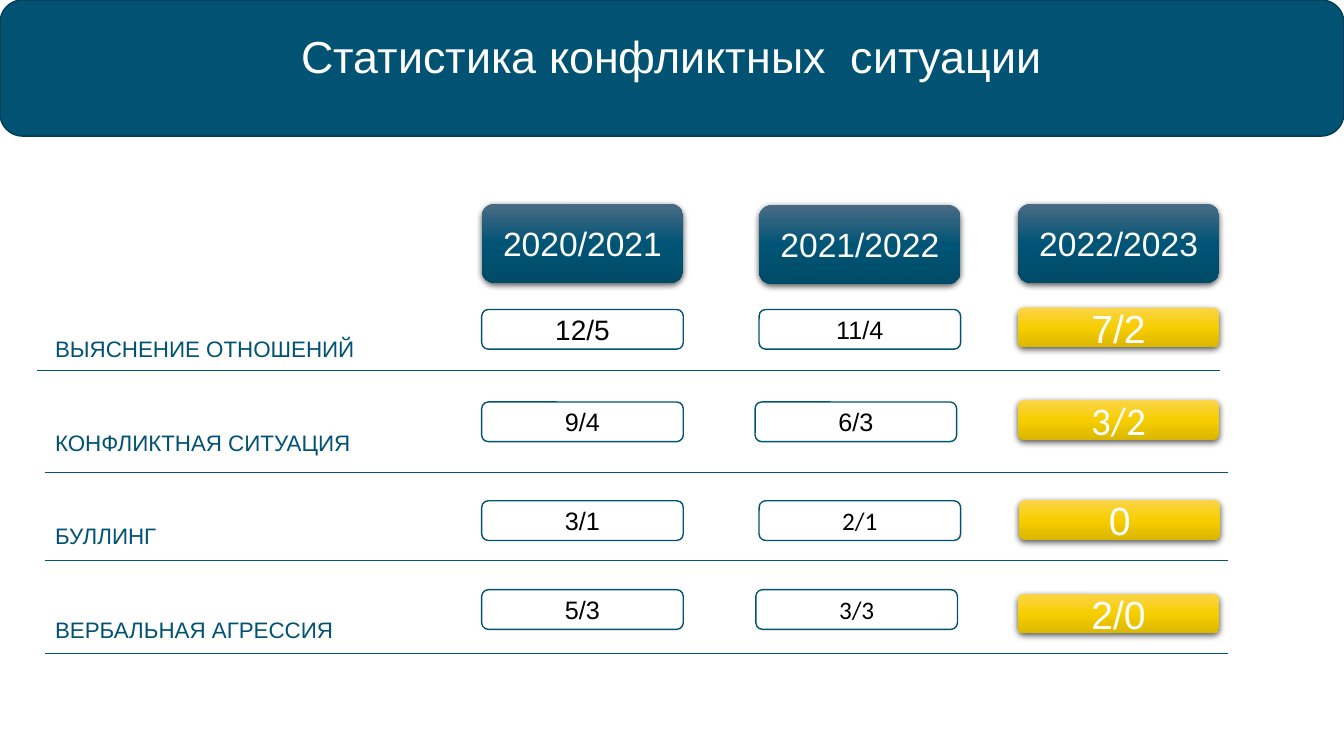
import pptx
import pptx.util
import pptx.dml.color
import pptx.enum.shapes
import pptx.enum.text
import pptx.oxml
import pptx.oxml.ns

Cm, Pt = pptx.util.Cm, pptx.util.Pt
Kind = pptx.enum.shapes.MSO_SHAPE
Align, Anchor = pptx.enum.text.PP_ALIGN, pptx.enum.text.MSO_ANCHOR
NS = pptx.oxml.ns.nsdecls("a")

# Content
TITLE = "Статистика конфликтных  ситуации"
LABELS = ["ВЫЯСНЕНИЕ ОТНОШЕНИЙ", "КОНФЛИКТНАЯ СИТУАЦИЯ", "БУЛЛИНГ", "ВЕРБАЛЬНАЯ АГРЕССИЯ"]
YEARS = [("2020/2021", 5.13), ("2021/2022", 5.16), ("2022/2023", 5.13)]  # text, top
# Each cell: text, size, font, shift from its column's left
COUNTS = [
    [("12/5", 20, "Arial", 0), ("9/4", 18, "Arial", 0),
     ("3/1", 18, "Arial", 0), ("5/3", 18, "Arial", 0)],
    [("11/4", 18, "Arial", 0), ("6/3", 18, "Arial", -0.1),
     ("2/1", 18, "Calibri", 0), ("3/3", 18, "Calibri", -0.08)],
    [("7/2", 28, "Arial", 0), ("3/2", 28, "Calibri", 0),
     ("0", 28, "Arial", 0.03), ("2/0", 28, "Arial", 0)],
]

# Layout in centimetres
WIDE, HIGH = 33.87, 19.05
COLS = [12.14, 19.13, 25.65]
ROWS = [7.8, 10.13, 12.62, 14.86]
GOLD_ROWS = [7.75, 10.08, 12.6, 14.96]
RULES = [(0.94, 9.32), (1.14, 11.91), (1.14, 14.12), (1.14, 16.46)]  # left, top
RULE_W, CELL_W, CELL_H, HEAD_H = 29.8, 5.08, 1, 2

# Colours
TEAL, EDGE, WHITE, BLACK = "025373", "013D55", "FFFFFF", "000000"
BLUES = ["4B6B85", "005475", "004B68"]
GOLDS = ["FBD54B", "F7CE00", "DBB700"]


def color(hex_):
    return pptx.dml.color.RGBColor.from_string(hex_)


def write(par, text, size, font, ink):
    run = par.add_run()
    run.text = text
    run.font.size, run.font.name = Pt(size), font
    run.font.color.rgb = color(ink)


def shade(box, tones):
    """Three-tone vertical gradient with a soft drop shadow."""
    stops = "".join(f'<a:gs pos="{i * 50000}"><a:srgbClr val="{tone}"/></a:gs>'
                    for i, tone in enumerate(tones))
    grad = pptx.oxml.parse_xml(f'<a:gradFill {NS} rotWithShape="1"><a:gsLst>{stops}</a:gsLst>'
                               '<a:lin ang="5400000" scaled="0"/></a:gradFill>')
    glow = pptx.oxml.parse_xml(
        f'<a:effectLst {NS}><a:outerShdw blurRad="{Pt(4.5)}" dist="{Pt(1.5)}" dir="5400000" '
        'rotWithShape="0"><a:srgbClr val="000000"><a:alpha val="63000"/></a:srgbClr>'
        '</a:outerShdw></a:effectLst>')
    box.line.fill.background()
    props = box._element.spPr
    props.find(pptx.oxml.ns.qn("a:prstGeom")).addnext(grad)
    props.find(pptx.oxml.ns.qn("a:ln")).addnext(glow)


def panel(left, top, width, height, fill, edge=None):
    box = slide.shapes.add_shape(Kind.ROUNDED_RECTANGLE, Cm(left), Cm(top), Cm(width), Cm(height))
    if isinstance(fill, list):
        shade(box, fill)
    else:
        box.shadow.inherit = False
        box.fill.solid()
        box.fill.fore_color.rgb = color(fill)
        box.line.color.rgb = color(edge)
        box.line.width = Pt(1)
    return box


def caption(box, text, size, font, ink):
    frame = box.text_frame
    frame.word_wrap = True
    frame.vertical_anchor = Anchor.MIDDLE
    par = frame.paragraphs[0]
    par.alignment = Align.CENTER
    write(par, text, size, font, ink)


deck = pptx.Presentation()
deck.slide_width, deck.slide_height = Cm(WIDE), Cm(HIGH)
slide = deck.slides.add_slide(deck.slide_layouts[5])

# Row labels, one line of fixed height per row
names = slide.shapes.add_textbox(Cm(1.14), Cm(6.63), Cm(9.8), Cm(9.83)).text_frame
names.word_wrap = True
for i, label in enumerate(LABELS):
    par = names.add_paragraph() if i else names.paragraphs[0]
    par.line_spacing = Pt(67)
    write(par, label, 16, "Arial", TEAL)

# Rules under the rows
for left, top in RULES:
    rule = slide.shapes.add_connector(pptx.enum.shapes.MSO_CONNECTOR.STRAIGHT,
                                      Cm(left), Cm(top), Cm(left + RULE_W), Cm(top))
    rule.line.color.rgb = color(TEAL)
    rule.line.width = Pt(0.5)
    rule._element.spPr.append(pptx.oxml.parse_xml(f"<a:effectLst {NS}/>"))

# Year headings
for left, (year, top) in zip(COLS, YEARS):
    caption(panel(left, top, CELL_W, HEAD_H, BLUES), year, 24, "Arial", WHITE)

# Counts, with the latest year in gold
for left, cells in zip(COLS, COUNTS):
    last = left == COLS[-1]
    for top, (text, size, font, shift) in zip(GOLD_ROWS if last else ROWS, cells):
        box = panel(left + shift, top, CELL_W, CELL_H, GOLDS if last else WHITE, TEAL)
        caption(box, text, size, font, WHITE if last else BLACK)

# Banner with the title on top
panel(0, 0, WIDE, 3.43, TEAL, EDGE)
title = slide.shapes.title
title.left, title.top, title.width, title.height = Cm(0), Cm(0.5), Cm(WIDE), Cm(1.8)
caption(title, TITLE, 32, "Arial", WHITE)
slide.shapes._spTree.append(title._element)

deck.save("out.pptx")
